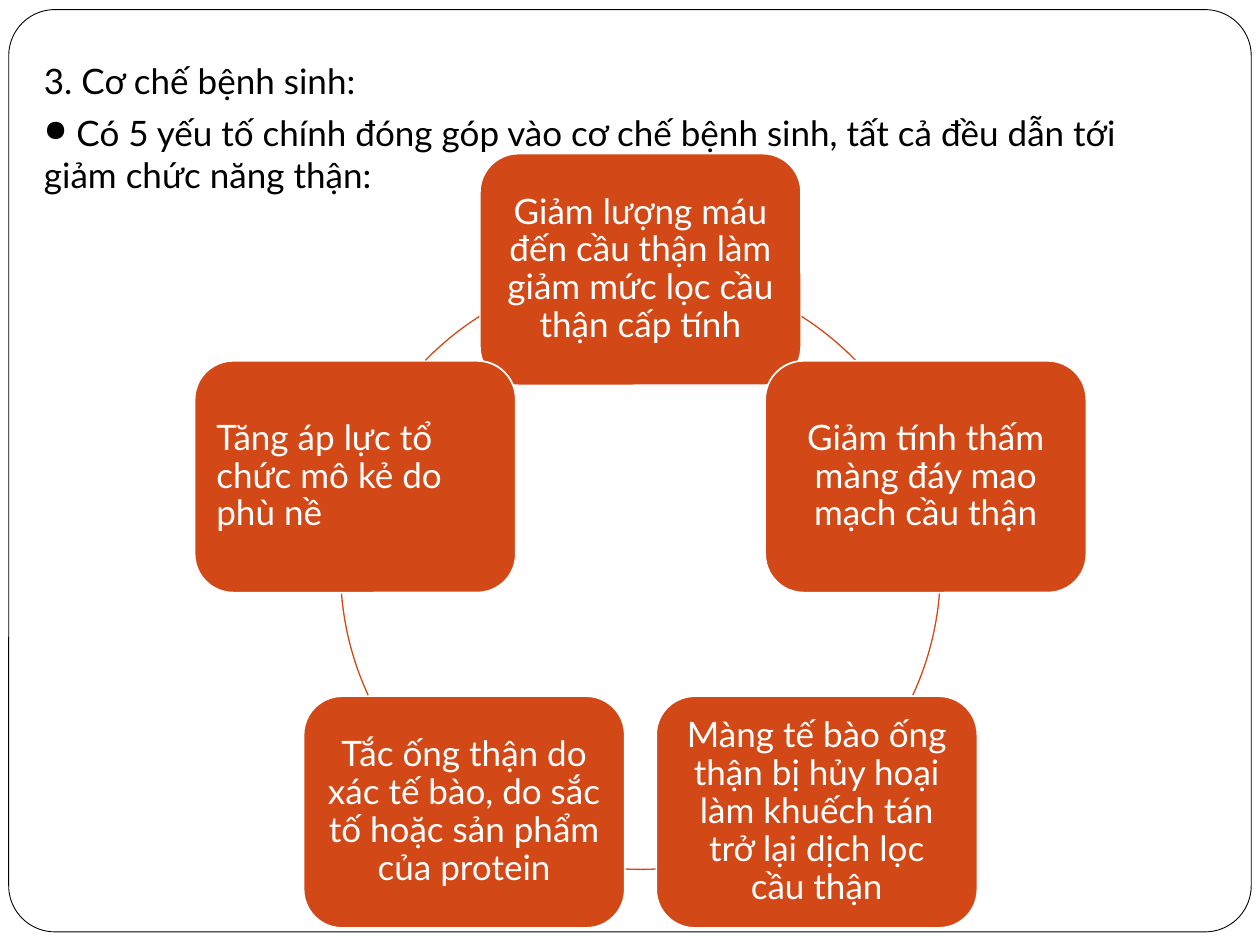
from dataclasses import dataclass
from math import cos, radians, sin

from lxml.etree import SubElement
from pptx import Presentation
from pptx.dml.color import RGBColor
from pptx.enum.shapes import MSO_SHAPE
from pptx.enum.text import MSO_ANCHOR, PP_ALIGN
from pptx.oxml.ns import qn
from pptx.shapes.autoshape import Shape
from pptx.slide import Slide
from pptx.text.text import _Paragraph
from pptx.util import Pt


@dataclass(frozen=True)
class Theme:
    font: str = "Lato"
    size: float = 20
    ink: RGBColor = RGBColor(0, 0, 0)
    paper: RGBColor = RGBColor(255, 255, 255)
    accent: RGBColor = RGBColor(0xD3, 0x48, 0x17)


@dataclass(frozen=True)
class Factor:
    text: str
    start: float
    end: float
    align: PP_ALIGN = PP_ALIGN.CENTER


@dataclass(frozen=True)
class Ring:
    x: float = 366
    y: float = 325.4
    radius: float = 171.4
    width: float = 183.6
    height: float = 132.5


THEME = Theme()
RING = Ring()
FACTORS = [
    Factor("Giảm lượng máu đến cầu thận làm giảm mức lọc cầu thận cấp tính", 302.5, 315.8),
    Factor("Giảm tính thấm màng đáy mao mạch cầu thận", 4.6, 24.8),
    Factor("Màng tế bào ống thận bị hủy hoại làm khuếch tán trở lại dịch lọc cầu thận", 87.1, 92.9),
    Factor("Tắc ống thận do xác tế bào, do sắc tố hoặc sản phẩm của protein", 155.2, 175.4),
    Factor("Tăng áp lực tổ chức mô kẻ do phù nề", 224.2, 237.5, PP_ALIGN.LEFT),
]
HEADING = "3. Cơ chế bệnh sinh:"
INTRO = " Có 5 yếu tố chính đóng góp vào cơ chế bệnh sinh, tất cả đều dẫn tới giảm chức năng thận:"


def style(para: _Paragraph, color: RGBColor) -> None:
    para.font.name = THEME.font
    para.font.size = Pt(THEME.size)
    para.font.color.rgb = color


def add_shape(slide: Slide, kind: MSO_SHAPE, left: float, top: float,
              width: float, height: float, line: RGBColor, weight: float) -> Shape:
    shape = slide.shapes.add_shape(kind, Pt(left), Pt(top), Pt(width), Pt(height))
    shape.shadow.inherit = False
    shape.line.color.rgb = line
    shape.line.width = Pt(weight)
    return shape


def add_frame(slide: Slide) -> None:
    frame = add_shape(slide, MSO_SHAPE.ROUNDED_RECTANGLE, 5, 5.5, 710, 527, THEME.ink, 0.5)
    frame.adjustments[0] = 0.05
    frame.fill.solid()
    frame.fill.fore_color.rgb = THEME.paper


def add_bullet(para: _Paragraph) -> None:
    props = para._p.get_or_add_pPr()
    SubElement(props, qn("a:buSzPct")).set("val", "85000")
    SubElement(props, qn("a:buChar")).set("char", "●")


def add_intro(slide: Slide) -> None:
    box = slide.shapes.add_textbox(Pt(18), Pt(30.2), Pt(666), Pt(486))
    frame = box.text_frame
    frame.word_wrap = True
    for para, text in ((frame.paragraphs[0], HEADING), (frame.add_paragraph(), INTRO)):
        para.text = text
        para.space_before = Pt(5.8)
        style(para, THEME.ink)
    add_bullet(para)


def add_factor(slide: Slide, factor: Factor, angle: float) -> None:
    left = RING.x + RING.radius * cos(radians(angle)) - RING.width / 2
    top = RING.y + RING.radius * sin(radians(angle)) - RING.height / 2
    box = add_shape(slide, MSO_SHAPE.ROUNDED_RECTANGLE, left, top,
                    RING.width, RING.height, THEME.paper, 1)
    box.fill.solid()
    box.fill.fore_color.rgb = THEME.accent
    frame = box.text_frame
    frame.word_wrap = True
    frame.vertical_anchor = MSO_ANCHOR.MIDDLE
    frame.margin_left = frame.margin_right = Pt(6)
    frame.margin_top = frame.margin_bottom = Pt(6)
    para = frame.paragraphs[0]
    para.text = factor.text
    para.alignment = factor.align
    para.line_spacing = 0.9
    style(para, THEME.paper)


def add_arc(slide: Slide, factor: Factor) -> None:
    side = 2 * RING.radius
    arc = add_shape(slide, MSO_SHAPE.ARC, RING.x - RING.radius, RING.y - RING.radius,
                    side, side, THEME.accent, 0.75)
    arc.fill.background()
    arc.adjustments[0] = factor.start * 0.6
    arc.adjustments[1] = factor.end * 0.6


def main() -> None:
    deck = Presentation()
    deck.slide_width, deck.slide_height = Pt(720), Pt(540)
    slide = deck.slides.add_slide(deck.slide_layouts[6])
    add_frame(slide)
    add_intro(slide)
    for index, factor in enumerate(FACTORS):
        add_factor(slide, factor, index * 360 / len(FACTORS) - 90)
        add_arc(slide, factor)
    deck.save("out.pptx")


if __name__ == "__main__":
    main()
